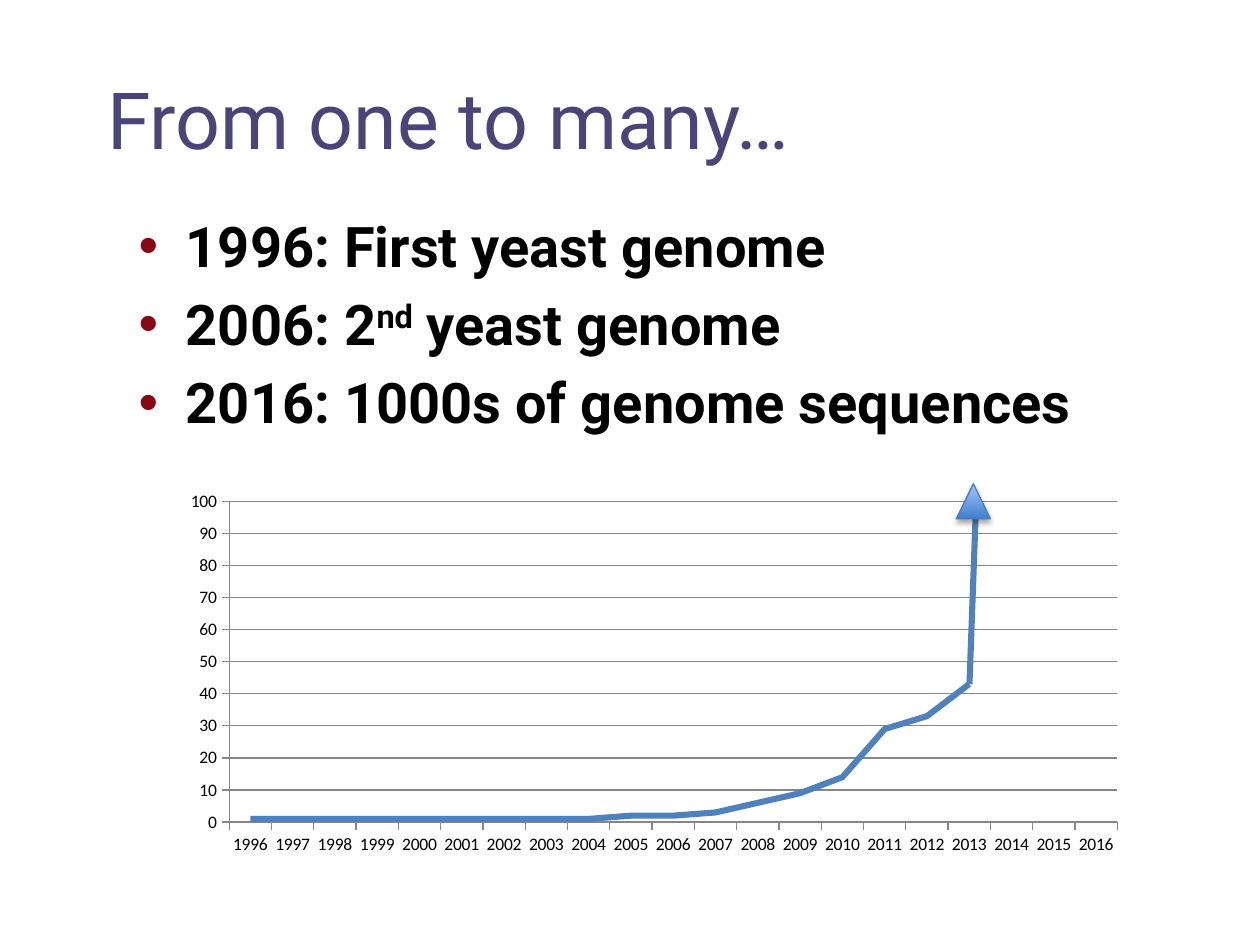
import pptx
import pptx.util
import pptx.chart.data
import pptx.dml.color
import pptx.enum.chart
import pptx.enum.shapes
import pptx.enum.text
import pptx.oxml
import pptx.oxml.ns

Pt = pptx.util.Pt
RGB = pptx.dml.color.RGBColor.from_string
NS = pptx.oxml.ns.nsdecls("a")
HUES = {"title": "4A4478", "text": "000000", "dot": "880813", "line": "4F81BD",
        "grid": "868686", "low": "3F80CE", "high": "A4C4FF", "edge": "4B7EBC"}


def style(item, form):
    for name, value in form.items():
        setattr(item, name, value)


def paint(font, face, size, hue, bold=False):
    style(font, {"name": face, "size": Pt(size), "bold": bold})
    font.color.rgb = RGB(HUES[hue])


deck = pptx.Presentation()
style(deck, {"slide_width": Pt(720), "slide_height": Pt(540)})
slide = deck.slides.add_slide(deck.slide_layouts[1])

title, body = slide.placeholders
style(title, {"left": Pt(54), "top": Pt(22.5), "width": Pt(648), "height": Pt(90)})
style(body, {"left": Pt(72), "top": Pt(117), "width": Pt(576), "height": Pt(356.5)})
for box, anchor in ((title, "MIDDLE"), (body, "TOP")):
    style(box.text_frame, {
        "word_wrap": True,
        "auto_size": pptx.enum.text.MSO_AUTO_SIZE.NONE,
        "vertical_anchor": pptx.enum.text.MSO_ANCHOR[anchor]})

para = title.text_frame.paragraphs[0]
para.alignment = pptx.enum.text.PP_ALIGN.LEFT
run = para.add_run()
run.text = "From one to many…"
paint(run.font, "Roboto", 45, "title")

items = [["1996: First yeast genome"],
         ["2006: 2", "nd", " yeast genome"],
         ["2016: 1000s of genome sequences"]]
for row, parts in enumerate(items):
    para = body.text_frame.add_paragraph() if row else body.text_frame.paragraphs[0]
    style(para, {"alignment": pptx.enum.text.PP_ALIGN.LEFT,
                 "space_before": Pt(6.4 if row else 0)})
    props = para._p.get_or_add_pPr()
    props.set("marL", str(Pt(27)))
    props.set("indent", str(-Pt(27)))
    for xml in (f'<a:buClr {NS}><a:srgbClr val="{HUES["dot"]}"/></a:buClr>',
                f'<a:buChar {NS} char="•"/>'):
        props.append(pptx.oxml.parse_xml(xml))
    for part in parts:
        run = para.add_run()
        run.text = part
        paint(run.font, "Roboto", 32, "text", True)
        if part == "nd":
            run._r.get_or_add_rPr().set("baseline", "30000")

data = pptx.chart.data.CategoryChartData()
data.categories = [str(year) for year in range(1996, 2017)]
data.add_series("Series 1", [1] * 9 + [2, 2, 3, 6, 9, 14, 29, 33, 43] + [None] * 3)
chart = slide.shapes.add_chart(
    pptx.enum.chart.XL_CHART_TYPE.LINE, Pt(98), Pt(276.5), Pt(551.5), Pt(216), data).chart
style(chart, {"has_legend": False, "has_title": False})
paint(chart.font, "Calibri", 10, "text")
plot = chart.plots[0]
plot.vary_by_categories = False
curve = plot.series[0]
curve.smooth = False
curve.marker.style = pptx.enum.chart.XL_MARKER_STYLE.NONE

years, counts = chart.category_axis, chart.value_axis
style(counts, {"minimum_scale": 0, "maximum_scale": 100, "major_unit": 10,
               "has_major_gridlines": True})
for axis in (years, counts):
    axis.major_tick_mark = pptx.enum.chart.XL_TICK_MARK.OUTSIDE

rise = slide.shapes.add_connector(pptx.enum.shapes.MSO_CONNECTOR.STRAIGHT,
                                  Pt(554), Pt(391), Pt(557.5), Pt(295))
rise._element.spPr.append(pptx.oxml.parse_xml(f'<a:effectLst {NS}/>'))

tip = slide.shapes.add_shape(pptx.enum.shapes.MSO_SHAPE.ISOSCELES_TRIANGLE,
                             Pt(546.5), Pt(276.5), Pt(19.5), Pt(20))
tip.fill.gradient()
tip.fill.gradient_angle = 90
for stop, hue, place in zip(tip.fill.gradient_stops, ("low", "high"), (0, 1)):
    stop.color.rgb = RGB(HUES[hue])
    stop.position = place
tip.shadow.inherit = False
glow = tip._element.spPr.find(pptx.oxml.ns.qn("a:effectLst"))
glow.append(pptx.oxml.parse_xml(
    f'<a:outerShdw {NS} blurRad="{Pt(3.1)}" dist="{Pt(1.8)}" dir="5400000" rotWithShape="0">'
    '<a:srgbClr val="000000"><a:alpha val="35000"/></a:srgbClr></a:outerShdw>'))

for line, hue, width in ((curve.format.line, "line", 3.5), (rise.line, "line", 3.5),
                         (years.format.line, "grid", 0.75),
                         (counts.format.line, "grid", 0.75),
                         (counts.major_gridlines.format.line, "grid", 0.75),
                         (tip.line, "edge", 0.75)):
    line.width = Pt(width)
    line.color.rgb = RGB(HUES[hue])

deck.save("out.pptx")
